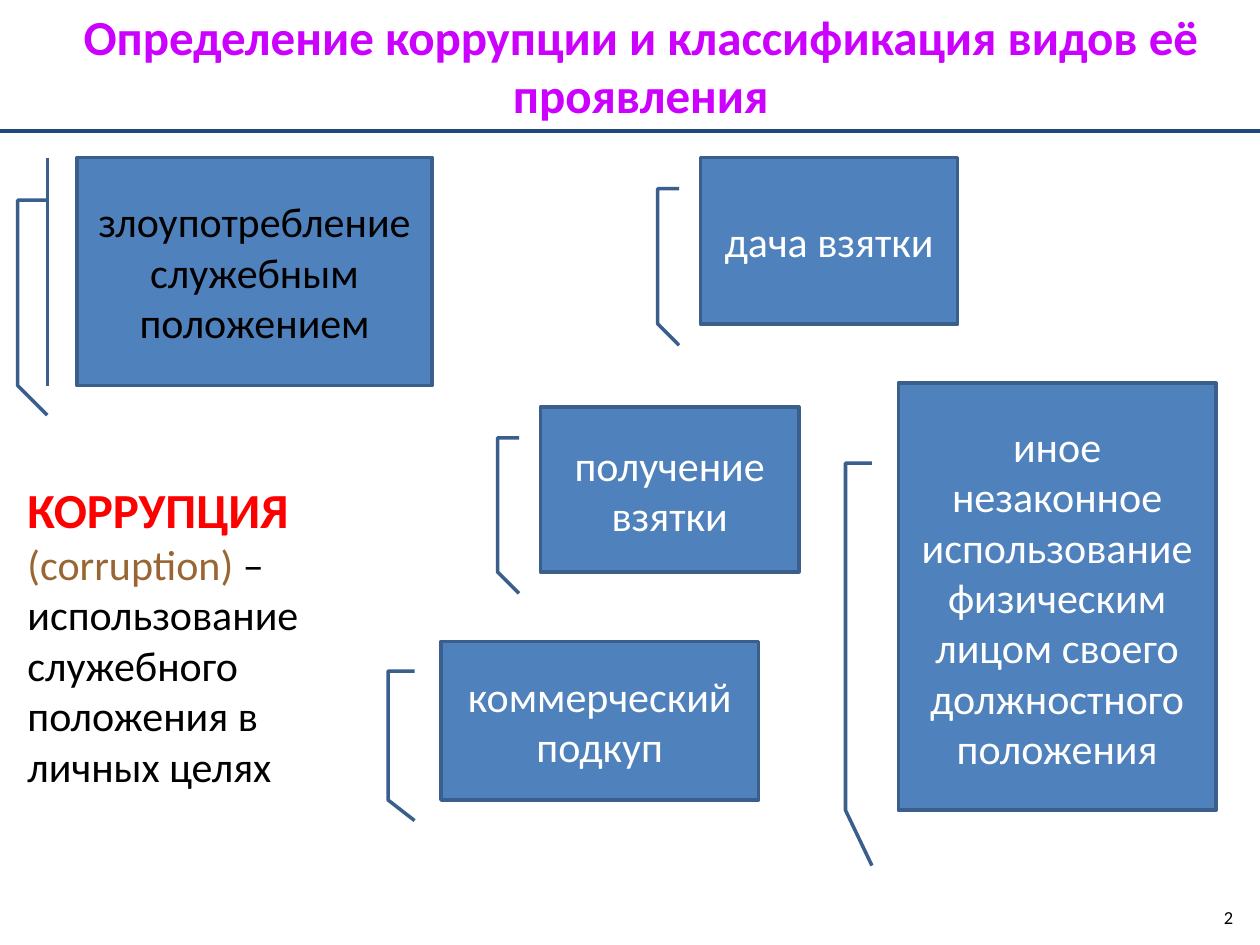
from lxml import etree
from pptx import Presentation
from pptx.dml.color import RGBColor
from pptx.enum.shapes import MSO_CONNECTOR, MSO_SHAPE as Preset
from pptx.enum.text import MSO_ANCHOR as Anchor, PP_ALIGN as Align
from pptx.oxml.ns import qn
from pptx.util import Inches, Pt


def color(hex_value):
    return RGBColor.from_string(hex_value)


def write(frame, runs, align, anchor=Anchor.TOP):
    """Fill one wrapped paragraph with (text, size, colour, bold) runs."""
    frame.word_wrap = True
    frame.vertical_anchor = anchor
    paragraph = frame.paragraphs[0]
    paragraph.alignment = align
    paragraph.font.name = "Calibri"
    for text, size, hex_value, bold in runs:
        run = paragraph.add_run()
        run.text = text
        run.font.size = Pt(size)
        run.font.bold = bold
        run.font.color.rgb = color(hex_value)


prs = Presentation()
prs.slide_width, prs.slide_height = Inches(10), Inches(7.5)
slide = prs.slides.add_slide(prs.slide_layouts[6])
shapes = slide.shapes

# Rule under the title
rule = shapes.add_connector(MSO_CONNECTOR.STRAIGHT, 0, Inches(1.04), Inches(10), Inches(1.04))
rule.line.color.rgb = color("1F497D")
rule.line.width = Pt(2)
etree.SubElement(rule.line._ln.getparent(), qn("a:effectLst"))

# Title, definition and page number
texts = [
    ((9.5, 7.14, 0.5, 0.4), Align.CENTER, Anchor.TOP, [("2", 10.5, "000000", False)]),
    ((0.17, 0, 9.83, 1.04), Align.CENTER, Anchor.TOP,
     [("Определение коррупции и классификация видов её проявления", 28, "CC00FF", True)]),
    ((0.12, 3.6, 2.83, 2.88), Align.LEFT, Anchor.MIDDLE,
     [("КОРРУПЦИЯ", 28, "FF0000", True),
      (" ", 18, "996633", True),
      ("(corruption) ", 24, "996633", False),
      ("–использование служебного положения в личных целях", 24, "000000", False)]),
]
for box, align, anchor, runs in texts:
    textbox = shapes.add_textbox(*map(Inches, box))
    write(textbox.text_frame, runs, align, anchor)

# Kinds of corruption
ACCENTED = Preset.LINE_CALLOUT_3_BORDER_AND_ACCENT_BAR
PLAIN = Preset.LINE_CALLOUT_3
kinds = [
    (ACCENTED, (0.61, 1.25, 2.82, 1.81), "злоупотребление служебным положением", "000000"),
    (PLAIN, (4.29, 3.23, 2.05, 1.31), "получение взятки", "FFFFFF"),
    (PLAIN, (5.56, 1.25, 2.04, 1.32), "дача взятки", "FFFFFF"),
    (PLAIN, (3.5, 5.09, 2.52, 1.26), "коммерческий подкуп", "FFFFFF"),
    (PLAIN, (7.13, 3.04, 2.52, 3.39),
     "иное незаконное использование физическим лицом своего должностного положения", "FFFFFF"),
]
for preset, box, text, text_color in kinds:
    callout = shapes.add_shape(preset, *map(Inches, box))
    callout.shadow.inherit = False
    callout.fill.solid()
    callout.fill.fore_color.rgb = color("4F81BD")
    callout.line.color.rgb = color("3A5F8C")
    callout.line.width = Pt(2)
    write(callout.text_frame, [(text, 24, text_color, False)], Align.CENTER, Anchor.MIDDLE)

prs.save("out.pptx")
